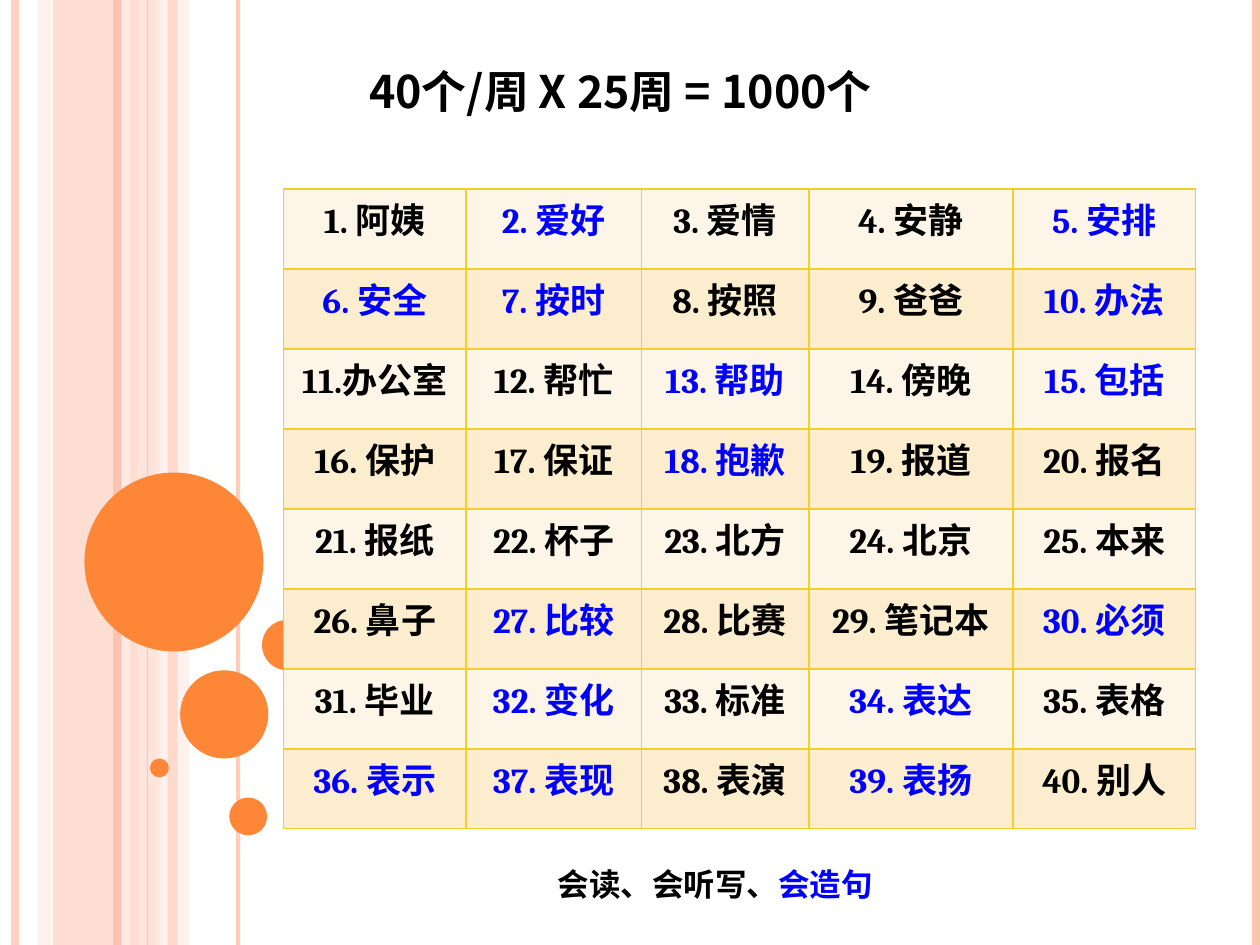
from lxml.etree import SubElement
from pptx import Presentation
from pptx.dml.color import RGBColor
from pptx.enum.shapes import MSO_CONNECTOR as CONNECTOR, MSO_SHAPE as SHAPE
from pptx.enum.text import MSO_ANCHOR as ANCHOR, MSO_AUTO_SIZE as AUTO_SIZE, PP_ALIGN as ALIGN
from pptx.oxml.ns import qn
from pptx.util import Inches, Pt

BLACK, BLUE, ORANGE, GOLD = "000000", "0000FF", "FE8637", "F5CD2D"
PEACH, PINK, PALE = "FEC3AE", "FFD9CE", "FFEDE8"
ROW_FILLS = ("FDF6E8", "FBEDCD")

# left, width, colour, opacity in percent
STRIPES = [
    (0.42, 0.67, PEACH, 54), (0.3, 0.11, PINK, 36),
    (1.08, 0.2, PINK, 70), (1.25, 0.25, PALE, 71),
]
THIN_STRIPE = (1.33, 0.08, PEACH, 51)
# x, line width in points, colour, opacity in percent
RULES = [
    (0.12, 4.5, PEACH, 73), (1, 4.5, PALE, 83), (0.93, 4.5, PEACH, 100),
    (1.89, 2.25, PEACH, 82), (1.17, 0.75, PEACH, 100), (9.97, 4.5, PEACH, 100),
]
# left, top, diameter
BUBBLES = [
    (0.67, 3.75, 1.42), (1.43, 5.32, 0.7), (1.19, 6.02, 0.15),
    (1.82, 6.33, 0.3), (2.08, 4.92, 0.4),
]
WORDS = """阿姨 爱好 爱情 安静 安排 安全 按时 按照 爸爸 办法
办公室 帮忙 帮助 傍晚 包括 保护 保证 抱歉 报道 报名
报纸 杯子 北方 北京 本来 鼻子 比较 比赛 笔记本 必须
毕业 变化 标准 表达 表格 表示 表现 表演 表扬 别人""".split()
SENTENCE_WORDS = {2, 5, 6, 7, 10, 13, 15, 18, 27, 30, 32, 34, 36, 37, 39}
TIGHT_NUMBERS = {11}
COLUMN_WIDTHS = (1.45, 1.39, 1.33, 1.62, 1.45)
TABLE_HEIGHT = 5.08


def rgb(hex_color):
    return RGBColor.from_string(hex_color)


def set_opacity(fill, percent):
    if percent < 100:
        color = fill._xPr.find(qn("a:solidFill"))[0]
        SubElement(color, qn("a:alpha"), val=str(percent * 1000))


class WordSlide:
    """Holds the current slide and its text style."""

    cjk_font = "Noto Sans CJK SC"
    latin_font = "Cambria"

    def __init__(self, slide):
        self.slide = slide
        self.shapes = slide.shapes

    def style(self, run, size, color, latin=latin_font):
        run.font.size = Pt(size)
        run.font.bold = True
        run.font.name = latin
        run.font.color.rgb = rgb(color)
        SubElement(run._r.get_or_add_rPr(), qn("a:ea"), typeface=self.cjk_font)

    def block(self, kind, left, top, width, height, color, opacity=100):
        shape = self.shapes.add_shape(
            kind, Inches(left), Inches(top), Inches(width), Inches(height))
        shape.shadow.inherit = False
        shape.fill.solid()
        shape.fill.fore_color.rgb = rgb(color)
        set_opacity(shape.fill, opacity)
        shape.line.fill.background()

    def stripe(self, left, width, color, opacity):
        self.block(SHAPE.RECTANGLE, left, 0, width, 7.5, color, opacity)

    def rule(self, x, weight, color, opacity):
        line = self.shapes.add_connector(
            CONNECTOR.STRAIGHT, Inches(x), 0, Inches(x), Inches(7.5))
        line.line.width = Pt(weight)
        line.line.color.rgb = rgb(color)
        set_opacity(line.line.fill, opacity)
        SubElement(line._element.spPr, qn("a:effectLst"))

    def bubble(self, left, top, diameter):
        self.block(SHAPE.OVAL, left, top, diameter, diameter, ORANGE)

    def title(self, text):
        title = self.shapes.title
        title.left, title.top = Inches(2.83), Inches(0.25)
        title.width, title.height = Inches(5.67), Inches(0.75)
        frame = title.text_frame
        frame.text = text
        frame.auto_size = AUTO_SIZE.NONE
        frame.vertical_anchor = ANCHOR.BOTTOM
        frame.paragraphs[0].alignment = ALIGN.LEFT
        run = frame.paragraphs[0].runs[0]
        self.style(run, 32, BLACK, self.cjk_font)
        run._r.get_or_add_rPr().set("cap", "small")

    def word_cell(self, cell, text, color, fill):
        cell.margin_left = cell.margin_right = Inches(0.07)
        cell.margin_top = cell.margin_bottom = 0
        cell.text = text
        paragraph = cell.text_frame.paragraphs[0]
        paragraph.alignment = ALIGN.CENTER
        paragraph.line_spacing = 1.07
        self.style(paragraph.runs[0], 20, color)
        properties = cell._tc.get_or_add_tcPr()
        for side in ("a:lnL", "a:lnR", "a:lnT", "a:lnB"):
            border = SubElement(properties, qn(side), w=str(Pt(1)))
            SubElement(SubElement(border, qn("a:solidFill")), qn("a:srgbClr"), val=GOLD)
        cell.fill.solid()
        cell.fill.fore_color.rgb = rgb(fill)

    def word_table(self, words):
        columns = len(COLUMN_WIDTHS)
        rows = len(words) // columns
        table = self.shapes.add_table(
            rows, columns, Inches(2.25), Inches(1.5),
            Inches(sum(COLUMN_WIDTHS)), Inches(TABLE_HEIGHT)).table
        for column, width in zip(table.columns, COLUMN_WIDTHS):
            column.width = Inches(width)
        for index, word in enumerate(words):
            row, column = divmod(index, columns)
            number = index + 1
            gap = "" if number in TIGHT_NUMBERS else " "
            color = BLUE if number in SENTENCE_WORDS else BLACK
            self.word_cell(table.cell(row, column), f"{number}.{gap}{word}",
                           color, ROW_FILLS[row % 2])

    def caption(self, parts):
        box = self.shapes.add_textbox(Inches(4.33), Inches(6.82), Inches(2.74), Inches(0.4))
        box.text_frame.word_wrap = False
        box.text_frame.auto_size = AUTO_SIZE.SHAPE_TO_FIT_TEXT
        for text, color in parts:
            run = box.text_frame.paragraphs[0].add_run()
            run.text = text
            self.style(run, 18, color)


def main():
    deck = Presentation()
    deck.slide_width, deck.slide_height = Inches(10), Inches(7.5)
    slide = deck.slides.add_slide(deck.slide_layouts[0])
    subtitle = slide.placeholders[1]._element
    subtitle.getparent().remove(subtitle)

    page = WordSlide(slide)
    for stripe in STRIPES:
        page.stripe(*stripe)
    for rule in RULES:
        page.rule(*rule)
    page.stripe(*THIN_STRIPE)
    for bubble in BUBBLES:
        page.bubble(*bubble)
    page.word_table(WORDS)
    page.caption([("会读、会听写、", BLACK), ("会造句", BLUE)])
    page.title("40个/周 x 25周 = 1000个")
    deck.save("out.pptx")


if __name__ == "__main__":
    main()
